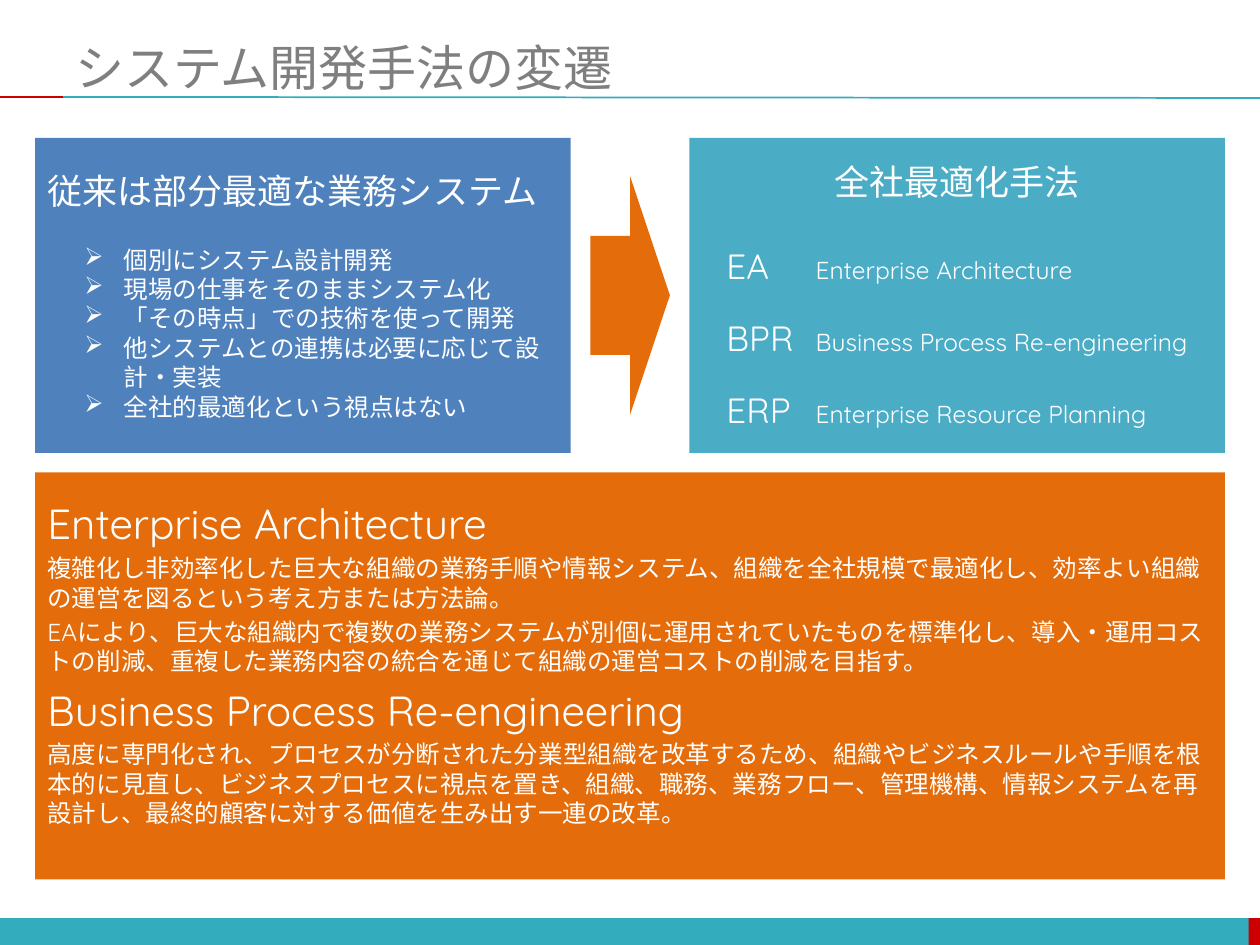
import pptx
import pptx.dml.color
import pptx.enum.shapes
import pptx.enum.text
import pptx.oxml.ns
import pptx.util
from lxml import etree

RGBColor = pptx.dml.color.RGBColor
Pt = pptx.util.Pt
SHAPE = pptx.enum.shapes.MSO_SHAPE
ALIGN = pptx.enum.text.PP_ALIGN
qn = pptx.oxml.ns.qn

TEAL = RGBColor(0x33, 0xAC, 0xBD)
RED = RGBColor(0xCC, 0x00, 0x00)
GREY = RGBColor(0x7F, 0x7F, 0x7F)
BLUE = RGBColor(0x4F, 0x81, 0xBD)
AQUA = RGBColor(0x4B, 0xAC, 0xC6)
ORANGE = RGBColor(0xE4, 0x6C, 0x0A)
WHITE = RGBColor(0xFF, 0xFF, 0xFF)

FONT = "Quicksand"
HEADING, LEAD, DETAIL = 20, 24, 14

PROBLEMS = [
    "個別にシステム設計開発",
    "現場の仕事をそのままシステム化",
    "「その時点」での技術を使って開発",
    "他システムとの連携は必要に応じて設計・実装",
    "全社的最適化という視点はない",
]
METHODS = [
    ("EA", "Enterprise Architecture"),
    ("BPR", "Business Process Re-engineering"),
    ("ERP", "Enterprise Resource Planning"),
]
EXPLANATIONS = [
    ("Enterprise Architecture", LEAD),
    ("複雑化し非効率化した巨大な組織の業務手順や情報システム、組織を全社規模で最適化し、"
     "効率よい組織の運営を図るという考え方または方法論。", DETAIL),
    ("EAにより、巨大な組織内で複数の業務システムが別個に運用されていたものを標準化し、"
     "導入・運用コストの削減、重複した業務内容の統合を通じて組織の運営コストの削減を目指す。", DETAIL),
    ("Business Process Re-engineering", LEAD),
    ("高度に専門化され、プロセスが分断された分業型組織を改革するため、組織やビジネスルールや手順を"
     "根本的に見直し、ビジネスプロセスに視点を置き、組織、職務、業務フロー、管理機構、情報システムを"
     "再設計し、最終的顧客に対する価値を生み出す一連の改革。", DETAIL),
]


def apply(target, values):
    for name, value in values.items():
        setattr(target, name, value)


class SlideBuilder:
    """Holds the text style and the slide being filled."""

    def __init__(self, slide, font):
        self.slide = slide
        self.font = font

    def title(self, text, left, top, width, height):
        heading = self.slide.shapes.title
        apply(heading, {"left": Pt(left), "top": Pt(top),
                        "width": Pt(width), "height": Pt(height)})
        apply(heading.text_frame, {
            "word_wrap": True,
            "auto_size": pptx.enum.text.MSO_AUTO_SIZE.NONE,
            "vertical_anchor": pptx.enum.text.MSO_ANCHOR.MIDDLE,
        })
        self.paragraph(heading.text_frame, [(text, 28)], color=GREY)

    def block(self, kind, left, top, width, height, fill):
        block = self.slide.shapes.add_shape(
            kind, Pt(left), Pt(top), Pt(width), Pt(height))
        block.shadow.inherit = False
        block.fill.solid()
        block.fill.fore_color.rgb = fill
        block.line.fill.background()
        return block

    def card(self, kind, left, top, width, height, fill, bottom_inset=3.6):
        """Add a filled block and return its text frame."""
        card = self.block(kind, left, top, width, height, fill)
        if kind == SHAPE.ROUNDED_RECTANGLE:
            card.adjustments[0] = 0
        apply(card.text_frame, {
            "word_wrap": True,
            "margin_bottom": Pt(bottom_inset),
            "vertical_anchor": pptx.enum.text.MSO_ANCHOR.MIDDLE,
        })
        return card.text_frame

    def rule(self, x1, y1, x2, y2, color):
        rule = self.slide.shapes.add_connector(
            pptx.enum.shapes.MSO_CONNECTOR.STRAIGHT, Pt(x1), Pt(y1), Pt(x2), Pt(y2))
        rule.line.color.rgb = color
        rule.line.width = Pt(1)
        etree.SubElement(rule._element.spPr, qn("a:effectLst"))

    def paragraph(self, frame, runs, color=WHITE, align=ALIGN.LEFT, before=0,
                  level=0, margin=0, indent=0, bullet=None, tab=None):
        """Fill the empty first paragraph, or add one, with (text, size) runs."""
        first = frame.paragraphs[0]
        paragraph = frame.add_paragraph() if first.runs else first
        properties = paragraph._p.get_or_add_pPr()
        if margin:
            properties.set("marL", str(Pt(margin)))
            properties.set("indent", str(Pt(indent)))
        if bullet:
            etree.SubElement(properties, qn("a:buChar")).set("char", bullet)
        if tab:
            stop = etree.SubElement(etree.SubElement(properties, qn("a:tabLst")), qn("a:tab"))
            stop.set("pos", str(Pt(tab)))
            stop.set("algn", "l")
        apply(paragraph, {"alignment": align, "level": level})
        if before:
            paragraph.space_before = Pt(before)
        for text, size in runs:
            run = paragraph.add_run()
            run.text = text
            apply(run.font, {"name": self.font, "size": Pt(size)})
            run.font.color.rgb = color
            etree.SubElement(run._r.get_or_add_rPr(), qn("a:ea")).set("typeface", self.font)


def main():
    deck = pptx.Presentation()
    apply(deck, {"slide_width": Pt(720), "slide_height": Pt(540)})
    builder = SlideBuilder(deck.slides.add_slide(deck.slide_layouts[5]), FONT)

    builder.block(SHAPE.RECTANGLE, 0, 524.6, 720, 15.6, TEAL)
    builder.block(SHAPE.RECTANGLE, 713.6, 524.6, 6.4, 15.6, RED)
    builder.rule(36, 55.4, 720, 56, TEAL)
    builder.rule(0, 55.4, 36, 55.4, RED)
    builder.title("システム開発手法の変遷", 36, 21.6, 684, 33.1)

    before_card = builder.card(SHAPE.ROUNDED_RECTANGLE, 20, 78.75, 306, 180, BLUE)
    builder.paragraph(before_card, [("従来は部分最適な業務システム", HEADING)])
    for index, problem in enumerate(PROBLEMS):
        builder.paragraph(before_card, [(problem, DETAIL)], level=1, margin=43.65,
                          indent=-22.5, bullet="➢", before=0 if index else 19)

    after_card = builder.card(SHAPE.ROUNDED_RECTANGLE, 394, 78.75, 306, 180, AQUA)
    builder.paragraph(after_card, [("全社最適化手法", HEADING)], align=ALIGN.CENTER)
    for index, (short, full) in enumerate(METHODS):
        builder.paragraph(after_card, [(short + "\t", HEADING), (full, DETAIL)], level=1,
                          margin=29, indent=-15, tab=71.5, before=17 if index else 24)

    builder.block(SHAPE.RIGHT_ARROW, 337.4, 100.8, 45.4, 136, ORANGE)

    details = builder.card(SHAPE.RECTANGLE, 20, 270, 680, 232.5, ORANGE, bottom_inset=18.5)
    for index, (text, size) in enumerate(EXPLANATIONS):
        builder.paragraph(details, [(text, size)], before=0.2 * size if index else 0)

    deck.save("out.pptx")


if __name__ == "__main__":
    main()
